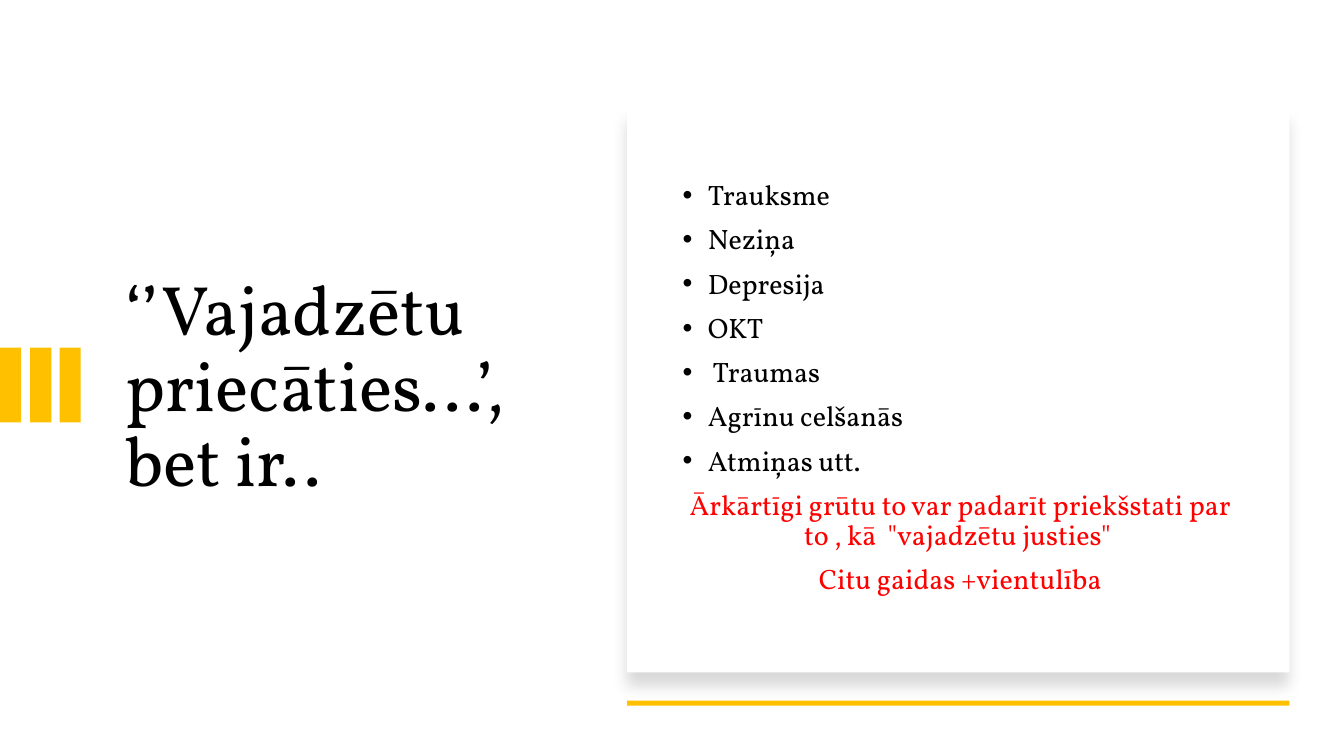
from dataclasses import dataclass

from lxml.etree import SubElement
from pptx import Presentation
from pptx.dml.color import RGBColor
from pptx.enum.shapes import MSO_SHAPE as Preset
from pptx.enum.text import MSO_ANCHOR as Anchor, MSO_AUTO_SIZE as AutoSize, PP_ALIGN as Align
from pptx.oxml.ns import qn
from pptx.shapes.autoshape import Shape
from pptx.text.text import _Paragraph as Paragraph
from pptx.util import Emu, Pt

EMU_PER_PX = 9144
FONT = "Vollkorn"
BLACK, WHITE, RED, AMBER = "000000", "FFFFFF", "FF0000", "FFC000"


@dataclass(frozen=True)
class Box:
    left: int
    top: int
    width: int
    height: int


@dataclass(frozen=True)
class Line:
    text: str
    bulleted: bool = True


TITLE = "‘’Vajadzētu  priecāties...’, bet ir.."
LINES = [
    Line("Trauksme"),
    Line("Neziņa"),
    Line("Depresija"),
    Line("OKT"),
    Line(" Traumas"),
    Line("Agrīnu celšanās"),
    Line("Atmiņas utt."),
    Line('Ārkārtīgi grūtu to var padarīt priekšstati par to , kā  "vajadzētu justies" ', False),
    Line("Citu gaidas +vientulība", False),
]
BARS = [Box(round(29.5 * index), 345, 21, 74) for index in range(3)]
CARD = Box(622, 107, 657, 560)
UNDERLINE = Box(622, 695, 657, 5)
TITLE_BOX = Box(114, 150, 426, 471)
BODY_BOX = Box(667, 150, 571, 471)


def px(length: int) -> Emu:
    return Emu(length * EMU_PER_PX)


def color(value: str) -> RGBColor:
    return RGBColor.from_string(value)


def add_rectangle(shapes, box: Box, fill: str) -> Shape:
    shape = shapes.add_shape(
        Preset.RECTANGLE, px(box.left), px(box.top), px(box.width), px(box.height)
    )
    shape.shadow.inherit = False
    shape.fill.solid()
    shape.fill.fore_color.rgb = color(fill)
    shape.line.fill.background()
    return shape


def add_shadow(shape: Shape) -> None:
    effects = shape._element.spPr.find(qn("a:effectLst"))
    shadow = SubElement(
        effects, qn("a:outerShdw"),
        blurRad=str(Pt(11)), dist=str(Pt(10)), dir="5400000", algn="t", rotWithShape="0",
    )
    shade = SubElement(shadow, qn("a:srgbClr"), val=BLACK)
    SubElement(shade, qn("a:alpha"), val="15000")


def place_text(shape: Shape, box: Box) -> None:
    shape.left, shape.top = px(box.left), px(box.top)
    shape.width, shape.height = px(box.width), px(box.height)
    frame = shape.text_frame
    frame.word_wrap = True
    frame.auto_size = AutoSize.NONE
    frame.vertical_anchor = Anchor.MIDDLE


def write(paragraph: Paragraph, text: str, size: int, fill: str, before: int, align: Align) -> None:
    paragraph.alignment = align
    paragraph.line_spacing = 0.9
    paragraph.space_before = Pt(before)
    run = paragraph.add_run()
    run.text = text
    run.font.name = FONT
    run.font.size = Pt(size)
    run.font.color.rgb = color(fill)


def set_bullet(paragraph: Paragraph, bulleted: bool) -> None:
    properties = paragraph._p.get_or_add_pPr()
    indent = px(25) if bulleted else 0
    properties.set("marL", str(indent))
    properties.set("indent", str(-indent))
    if bulleted:
        SubElement(properties, qn("a:buFont"), typeface="Arial")
        SubElement(properties, qn("a:buChar"), char="•")
    else:
        SubElement(properties, qn("a:buNone"))


def main() -> None:
    presentation = Presentation()
    presentation.slide_width, presentation.slide_height = px(1333), px(750)
    slide = presentation.slides.add_slide(presentation.slide_layouts[1])
    slide.background.fill.solid()
    slide.background.fill.fore_color.rgb = color(WHITE)

    title = slide.shapes.title
    place_text(title, TITLE_BOX)
    write(title.text_frame.paragraphs[0], TITLE, 50, BLACK, 0, Align.LEFT)

    bar_group = slide.shapes.add_group_shape()
    for bar in BARS:
        add_rectangle(bar_group.shapes, bar, AMBER)

    add_shadow(add_rectangle(slide.shapes, CARD, WHITE))

    body = slide.placeholders[1]
    slide.shapes._spTree.append(body._element)
    place_text(body, BODY_BOX)
    frame = body.text_frame
    for index, line in enumerate(LINES):
        paragraph = frame.add_paragraph() if index else frame.paragraphs[0]
        fill, align = (BLACK, Align.LEFT) if line.bulleted else (RED, Align.CENTER)
        write(paragraph, line.text, 20, fill, 10, align)
        set_bullet(paragraph, line.bulleted)

    add_rectangle(slide.shapes, UNDERLINE, AMBER)
    presentation.save("out.pptx")


if __name__ == "__main__":
    main()
